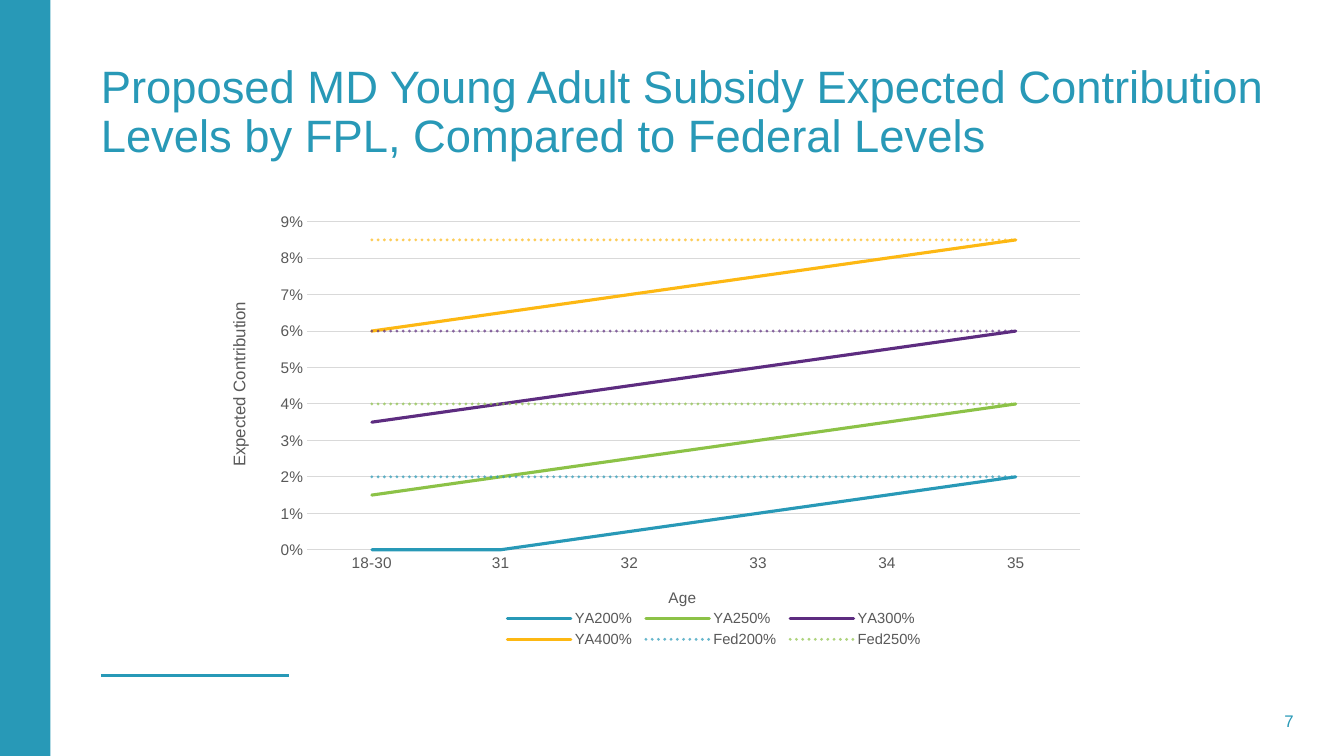
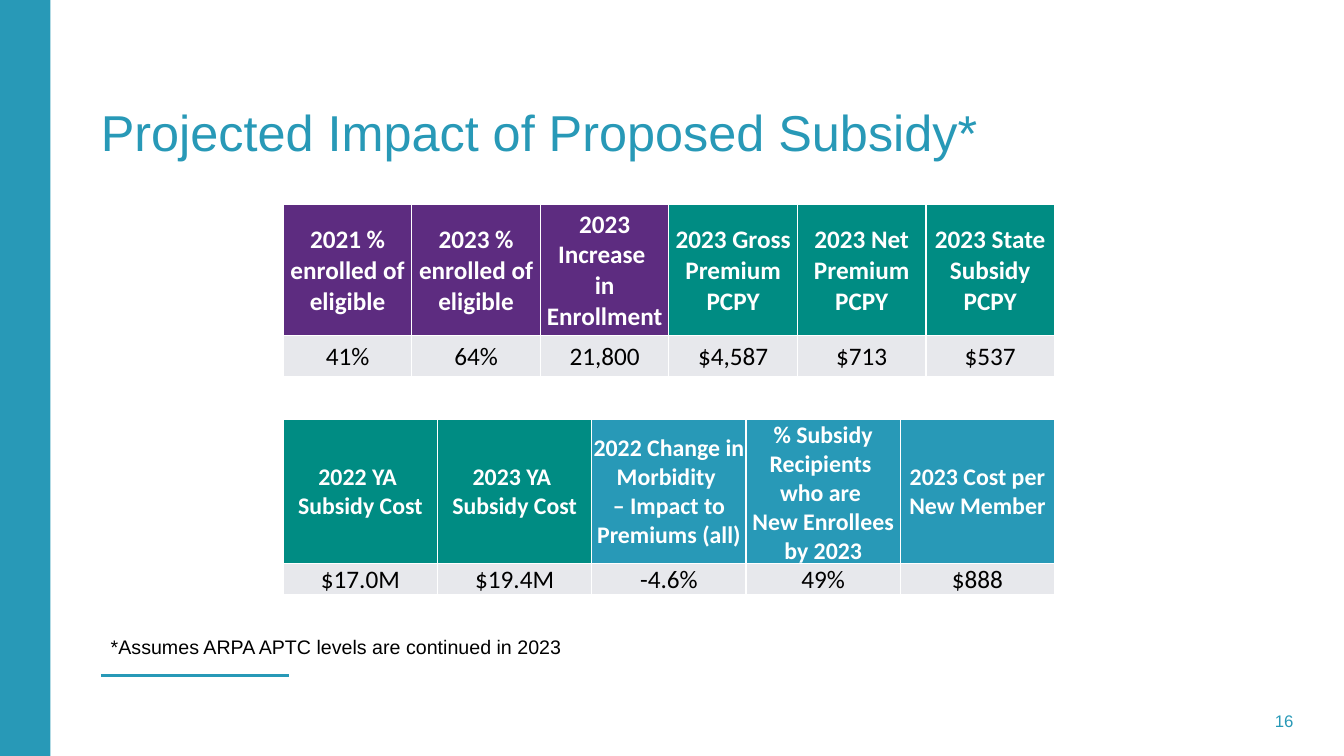
from copy import deepcopy
from dataclasses import dataclass

from pptx import Presentation
from pptx.chart.data import CategoryChartData
from pptx.dml.color import RGBColor
from pptx.enum.chart import XL_CHART_TYPE, XL_LEGEND_POSITION, XL_TICK_MARK
from pptx.enum.dml import MSO_LINE
from pptx.enum.shapes import MSO_CONNECTOR, MSO_SHAPE
from pptx.enum.text import MSO_ANCHOR, PP_ALIGN
from pptx.oxml.ns import qn
from pptx.util import Emu, Pt
from lxml.etree import SubElement


@dataclass(frozen=True)
class Theme:
    blue: str = "2899B7"
    green: str = "8CC247"
    purple: str = "5D2C80"
    yellow: str = "FDB813"
    teal: str = "008C83"
    pale: str = "E7E8EC"
    grid: str = "D9D9D9"
    gray: str = "595959"
    white: str = "FFFFFF"
    black: str = "000000"
    font: str = "Arial"
    table_font: str = "Calibri"
    title: float = 36
    long_title: float = 32.4
    cell: float = 18
    small_cell: float = 17
    note: float = 14
    label: float = 12
    axis: float = 11
    legend: float = 10.5


T = Theme()
AGES = ("18-30", "31", "32", "33", "34", "35")
# Poverty level, line colour, expected contribution in percent by age
LEVELS = (
    ("200%", T.blue, (0, 0, 0.5, 1, 1.5, 2)),
    ("250%", T.green, (1.5, 2, 2.5, 3, 3.5, 4)),
    ("300%", T.purple, (3.5, 4, 4.5, 5, 5.5, 6)),
    ("400%", T.yellow, (6, 6.5, 7, 7.5, 8, 8.5)),
)
# Heading, heading fill, value
ENROLLMENT = (
    ("2021 % enrolled of eligible", T.purple, "41%"),
    ("2023 % enrolled of eligible", T.purple, "64%"),
    ("2023 Increase \vin Enrollment", T.purple, "21,800"),
    ("2023 Gross Premium PCPY", T.teal, "$4,587"),
    ("2023 Net Premium PCPY", T.teal, "$713"),
    ("2023 State Subsidy PCPY", T.teal, "$537"),
)
COSTS = (
    ("2022 YA \vSubsidy Cost", T.teal, "$17.0M"),
    ("2023 YA \vSubsidy Cost", T.teal, "$19.4M"),
    ("2022 Change in Morbidity \v– Impact to Premiums (all)", T.blue, "-4.6%"),
    ("% Subsidy Recipients \vwho are \vNew Enrollees by 2023", T.blue, "49%"),
    ("2023 Cost per New Member", T.blue, "$888"),
)


def px(n):
    """Turn px, 100 to the inch, into EMU."""
    return Emu(n * 9144)


def rgb(color):
    return RGBColor.from_string(color)


def write(tf, text, size, color, font=T.font, bold=False, align=None, spacing=None):
    """Fill a text frame; a vertical tab in the text is a line break."""
    p = tf.paragraphs[0]
    p.text = text
    if align is not None:
        p.alignment = align
    if spacing is not None:
        p.line_spacing = spacing
    for r in p.runs:
        r.font.size, r.font.name, r.font.bold = Pt(size), font, bold
        r.font.color.rgb = rgb(color)
    for br in p._p.findall(qn("a:br")):
        br.insert(0, deepcopy(p.runs[0]._r.rPr))


def add_text(slide, box, text, anchor=MSO_ANCHOR.TOP, inset=True, **style):
    tf = slide.shapes.add_textbox(*map(px, box)).text_frame
    tf.word_wrap = True
    tf.vertical_anchor = anchor
    if not inset:
        tf.margin_left = tf.margin_top = tf.margin_right = tf.margin_bottom = 0
    write(tf, text, **style)


def add_base_slide(prs, title, number, title_size=T.title):
    """Add a slide with the side band, short rule, title and page number."""
    slide = prs.slides.add_slide(prs.slide_layouts[6])
    band = slide.shapes.add_shape(MSO_SHAPE.RECTANGLE, 0, 0, px(50), prs.slide_height)
    band.shadow.inherit = False
    band.fill.solid()
    band.fill.fore_color.rgb = rgb(T.blue)
    band.line.fill.background()
    rule = slide.shapes.add_connector(
        MSO_CONNECTOR.STRAIGHT, px(100), px(670), px(287), px(670))
    rule.line.color.rgb = rgb(T.blue)
    rule.line.width = Pt(2)
    SubElement(rule._element.spPr, qn("a:effectLst"))
    add_text(slide, (100, 40, 1183, 121), title, MSO_ANCHOR.BOTTOM, inset=False,
             size=title_size, color=T.blue, spacing=0.9)
    add_text(slide, (942, 695, 341, 40), number, MSO_ANCHOR.MIDDLE, inset=False,
             size=T.label, color=T.blue, align=PP_ALIGN.RIGHT)
    return slide


def place_part(part, index, inner=False, **fractions):
    """Give a chart part a manual layout, as fractions of the chart, at a child index."""
    for old in part.findall(qn("c:layout")):
        part.remove(old)
    layout = SubElement(part, qn("c:layout"))
    part.insert(index, layout)
    manual = SubElement(layout, qn("c:manualLayout"))
    if inner:
        SubElement(manual, qn("c:layoutTarget"), val="inner")
    for key in "xy":
        SubElement(manual, qn(f"c:{key}Mode"), val="edge")
    for key, value in fractions.items():
        SubElement(manual, qn(f"c:{key}"), val=str(value))


def style_axis(axis, title, size, rotation, **place):
    axis.major_tick_mark = axis.minor_tick_mark = XL_TICK_MARK.NONE
    axis.tick_labels.font.size = Pt(T.axis)
    axis.has_title = True
    write(axis.axis_title.text_frame, title, size, T.gray)
    element = axis.axis_title._element
    body = element.find(".//" + qn("a:bodyPr"))
    body.set("rot", str(rotation * 60000))
    body.set("vert", "horz")
    place_part(element, 1, **place)


def style_series(series, color, dotted):
    series.smooth = False
    line = series.format.line
    line.color.rgb = rgb(color)
    line.width = Pt(2.25)
    ln = line._get_or_add_ln()
    ln.set("cap", "rnd")
    if dotted:
        line.dash_style = MSO_LINE.ROUND_DOT
        SubElement(ln.find(".//" + qn("a:srgbClr")), qn("a:alpha"), val="70000")


def add_legend(chart, hidden):
    """Add the legend at the bottom, without the series at the hidden indexes."""
    chart.has_legend = True
    legend = chart.legend
    legend.position = XL_LEGEND_POSITION.BOTTOM
    legend.include_in_layout = False
    legend.font.size = Pt(T.legend)
    legend.font.name = T.font
    legend.font.color.rgb = rgb(T.gray)
    for at, series_index in enumerate(hidden, 1):
        entry = SubElement(legend._element, qn("c:legendEntry"))
        SubElement(entry, qn("c:idx"), val=str(series_index))
        SubElement(entry, qn("c:delete"), val="1")
        legend._element.insert(at, entry)
    place_part(legend._element, 1 + len(hidden), x=0.32, y=0.89, w=0.49, h=0.1)


def add_contribution_chart(slide):
    data = CategoryChartData(number_format="0%")
    data.categories = AGES
    for level, _, values in LEVELS:
        data.add_series("YA" + level, [v / 100 for v in values])
    for level, _, values in LEVELS:
        data.add_series("Fed" + level, [values[-1] / 100] * len(AGES))
    chart = slide.shapes.add_chart(
        XL_CHART_TYPE.LINE, px(215), px(202), px(873), px(449), data).chart
    chart.has_title = False
    chart.font.name = T.font
    chart.font.size = Pt(T.axis)
    chart.font.color.rgb = rgb(T.gray)
    chart.plots[0].vary_by_categories = False
    for i, series in enumerate(chart.plots[0].series):
        style_series(series, LEVELS[i % len(LEVELS)][1], dotted=i >= len(LEVELS))

    ages, shares = chart.category_axis, chart.value_axis
    style_axis(ages, "Age", T.axis, 0, x=0.51, y=0.84)
    ages.format.line.color.rgb = rgb(T.grid)
    ages.format.line.width = Pt(0.75)
    style_axis(shares, "Expected Contribution", T.label, -90, x=0.01, y=0.21)
    shares.minimum_scale, shares.maximum_scale, shares.major_unit = 0, 0.09, 0.01
    shares.tick_labels.number_format = "0%"
    shares.tick_labels.number_format_is_linked = False
    shares.format.line.fill.background()
    shares.major_gridlines.format.line.color.rgb = rgb(T.grid)
    shares.major_gridlines.format.line.width = Pt(0.75)
    add_legend(chart, hidden=(6, 7))
    place_part(chart._chartSpace.chart.plotArea, 0, inner=True,
               x=0.103, y=0.04, w=0.878, h=0.725)


def style_cell(cell, text, fill, **style):
    cell.margin_left = cell.margin_top = cell.margin_right = px(1)
    cell.margin_bottom = 0
    cell.vertical_anchor = MSO_ANCHOR.MIDDLE
    write(cell.text_frame, text, font=T.table_font, align=PP_ALIGN.CENTER, **style)
    tc_pr = cell._tc.get_or_add_tcPr()
    for side in "LRTB":
        ln = SubElement(tc_pr, qn(f"a:ln{side}"), w=str(Pt(1)))
        SubElement(SubElement(ln, qn("a:solidFill")), qn("a:srgbClr"), val=T.white)
    cell.fill.solid()
    cell.fill.fore_color.rgb = rgb(fill)


def add_figures_table(slide, columns, top, heights, head_size):
    width = 765
    table = slide.shapes.add_table(
        2, len(columns), px(281), px(top), px(width), px(sum(heights))).table
    table.first_row = table.horz_banding = False
    for row, height in zip(table.rows, heights):
        row.height = px(height)
    for i, (heading, fill, value) in enumerate(columns):
        table.columns[i].width = px(width) // len(columns)
        style_cell(table.cell(0, i), heading, fill,
                   size=head_size, color=T.white, bold=True)
        style_cell(table.cell(1, i), value, T.pale, size=T.cell, color=T.black)


def main():
    prs = Presentation()
    prs.slide_width, prs.slide_height = px(1333), px(750)

    slide = add_base_slide(
        prs, "Proposed MD Young Adult Subsidy Expected Contribution "
        "Levels by FPL, Compared to Federal Levels", "7", T.long_title)
    add_contribution_chart(slide)

    slide = add_base_slide(prs, "Projected Impact of Proposed Subsidy*", "16")
    add_figures_table(slide, ENROLLMENT, 203, (130, 41), T.cell)
    add_figures_table(slide, COSTS, 416, (141, 30), T.small_cell)
    add_text(slide, (100, 625, 964, 34), "*Assumes ARPA APTC levels are continued in 2023",
             size=T.note, color=T.black)
    prs.save("out.pptx")


if __name__ == "__main__":
    main()
